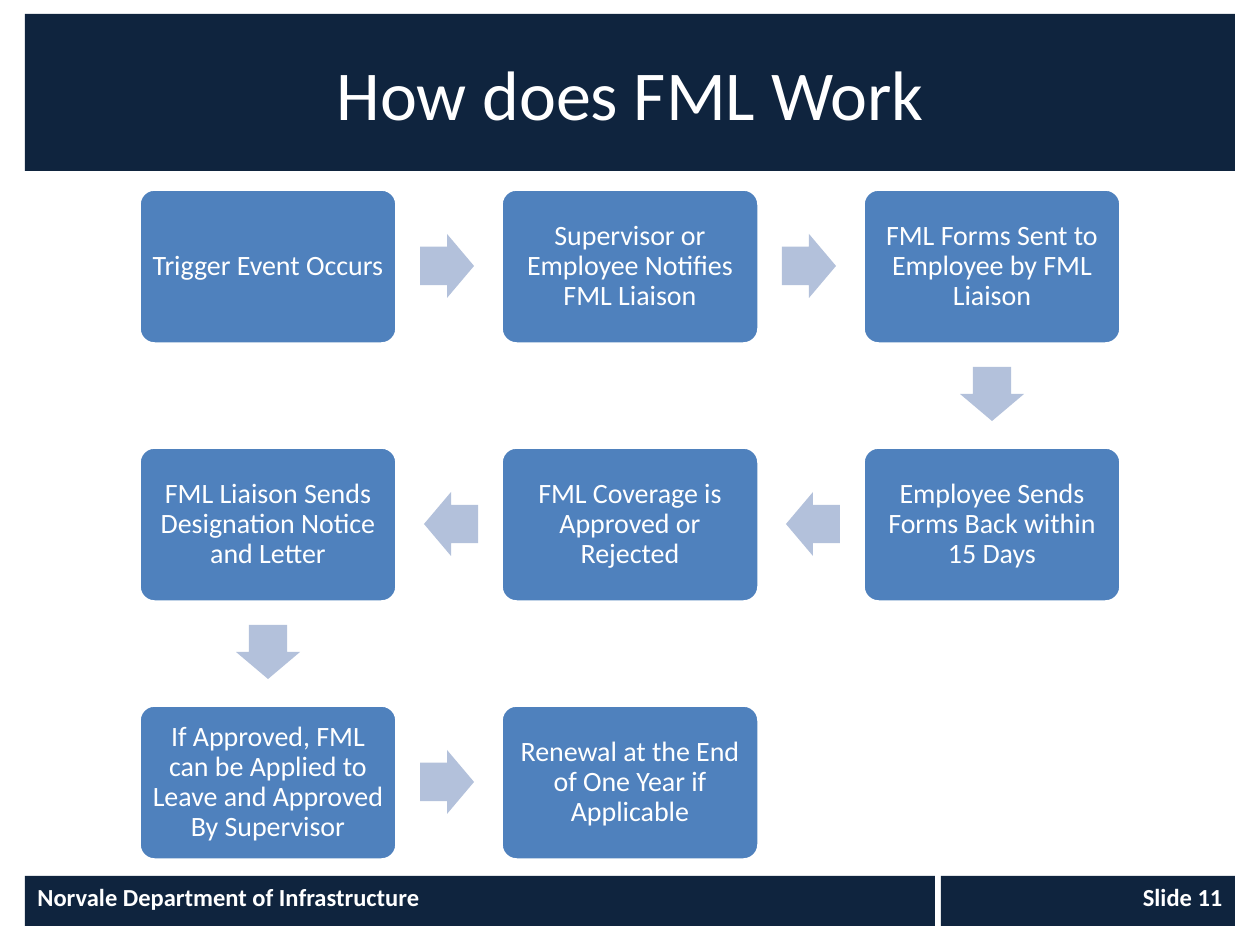
from dataclasses import dataclass

from pptx import Presentation
from pptx.dml.color import RGBColor
from pptx.enum.shapes import MSO_SHAPE
from pptx.enum.text import MSO_ANCHOR, PP_ALIGN
from pptx.util import Emu, Pt

RECTANGLE = MSO_SHAPE.RECTANGLE
ROUNDED = MSO_SHAPE.ROUNDED_RECTANGLE
ARROW = MSO_SHAPE.RIGHT_ARROW
TOP, MIDDLE = MSO_ANCHOR.TOP, MSO_ANCHOR.MIDDLE
LEFT, CENTER, RIGHT = PP_ALIGN.LEFT, PP_ALIGN.CENTER, PP_ALIGN.RIGHT

NAVY = RGBColor(0x0F, 0x24, 0x3E)
BLUE = RGBColor(0x4F, 0x81, 0xBD)
PALE_BLUE = RGBColor(0xB3, 0xC1, 0xDB)
WHITE = RGBColor(0xFF, 0xFF, 0xFF)

FONT = "Calibri"
PX_PER_INCH = 126
GRID_LEFT, GRID_TOP = 139, 189
COLUMN_STEP, ROW_STEP = 362, 258
BOX_WIDTH, BOX_HEIGHT = 258, 155
ARROW_WIDTH, ARROW_HEIGHT = 54, 64
ARROW_GAP = 23
COLUMNS = 3


@dataclass(frozen=True)
class Bar:
    left: int
    top: int
    width: int
    height: int
    text: str
    size: int
    align: PP_ALIGN
    anchor: MSO_ANCHOR = TOP
    bold: bool = True


@dataclass(frozen=True)
class Step:
    column: int
    row: int
    text: str

    @property
    def left(self) -> int:
        return GRID_LEFT + self.column * COLUMN_STEP

    @property
    def top(self) -> int:
        return GRID_TOP + self.row * ROW_STEP


BARS = [
    Bar(25, 14, 1210, 157, "How does FML Work", 40, CENTER, MIDDLE, False),
    Bar(25, 876, 910, 50, "Norvale Department of Infrastructure", 14, LEFT),
    Bar(941, 876, 294, 50, "Slide 11", 14, RIGHT),
]

STEP_TEXTS = [
    "Trigger Event Occurs",
    "Supervisor or Employee Notifies FML Liaison",
    "FML Forms Sent to Employee by FML Liaison",
    "Employee Sends Forms Back within 15 Days",
    "FML Coverage is Approved or Rejected",
    "FML Liaison Sends Designation Notice and Letter",
    "If Approved, FML can be Applied to Leave and Approved By Supervisor",
    "Renewal at the End of One Year if Applicable",
]


def px(length: int) -> Emu:
    return Emu(round(length * 914400 / PX_PER_INCH))


def add_box(page, kind, left: int, top: int, width: int, height: int, color: RGBColor):
    box = page.shapes.add_shape(kind, px(left), px(top), px(width), px(height))
    box.shadow.inherit = False
    box.fill.solid()
    box.fill.fore_color.rgb = color
    box.line.fill.background()
    return box


def write(box, text: str, size: int, align: PP_ALIGN, anchor: MSO_ANCHOR, bold: bool):
    frame = box.text_frame
    frame.text = text
    frame.word_wrap = True
    frame.vertical_anchor = anchor
    para = frame.paragraphs[0]
    para.alignment = align
    font = para.runs[0].font
    font.name, font.size, font.bold = FONT, Pt(size), bold
    font.color.rgb = WHITE
    return frame


def draw_bar(page, bar: Bar) -> None:
    box = add_box(page, RECTANGLE, bar.left, bar.top, bar.width, bar.height, NAVY)
    write(box, bar.text, bar.size, bar.align, bar.anchor, bar.bold)


def draw_step(page, step: Step) -> None:
    box = add_box(page, ROUNDED, step.left, step.top, BOX_WIDTH, BOX_HEIGHT, BLUE)
    box.adjustments[0] = 0.1
    box.line.color.rgb = WHITE
    box.line.width = Pt(2)
    frame = write(box, step.text, 16, CENTER, MIDDLE, False)
    frame.margin_left = frame.margin_right = px(8)
    frame.margin_top = frame.margin_bottom = px(8)
    frame.paragraphs[0].line_spacing = 0.9


def draw_arrow(page, start: Step, end: Step) -> None:
    left = start.left + BOX_WIDTH + ARROW_GAP
    top = start.top + (BOX_HEIGHT - ARROW_HEIGHT) // 2
    rotation = 0
    if end.row > start.row:
        left = start.left + (BOX_WIDTH - ARROW_WIDTH) // 2
        top = start.top + BOX_HEIGHT + ARROW_GAP - (ARROW_HEIGHT - ARROW_WIDTH) // 2
        rotation = 90
    elif end.column < start.column:
        left = start.left - ARROW_GAP - ARROW_WIDTH
        rotation = 180
    arrow = add_box(page, ARROW, left, top, ARROW_WIDTH, ARROW_HEIGHT, PALE_BLUE)
    arrow.adjustments[0] = 0.6
    arrow.adjustments[1] = 0.5
    arrow.rotation = rotation


def serpentine(texts: list[str]) -> list[Step]:
    steps = []
    for index, text in enumerate(texts):
        row, place = divmod(index, COLUMNS)
        column = COLUMNS - 1 - place if row % 2 else place
        steps.append(Step(column, row, text))
    return steps


def main() -> None:
    deck = Presentation()
    deck.slide_width, deck.slide_height = px(1260), px(945)
    page = deck.slides.add_slide(deck.slide_layouts[6])
    for bar in BARS:
        draw_bar(page, bar)
    steps = serpentine(STEP_TEXTS)
    for step in steps:
        draw_step(page, step)
    for start, end in zip(steps, steps[1:]):
        draw_arrow(page, start, end)
    deck.save("out.pptx")


if __name__ == "__main__":
    main()
